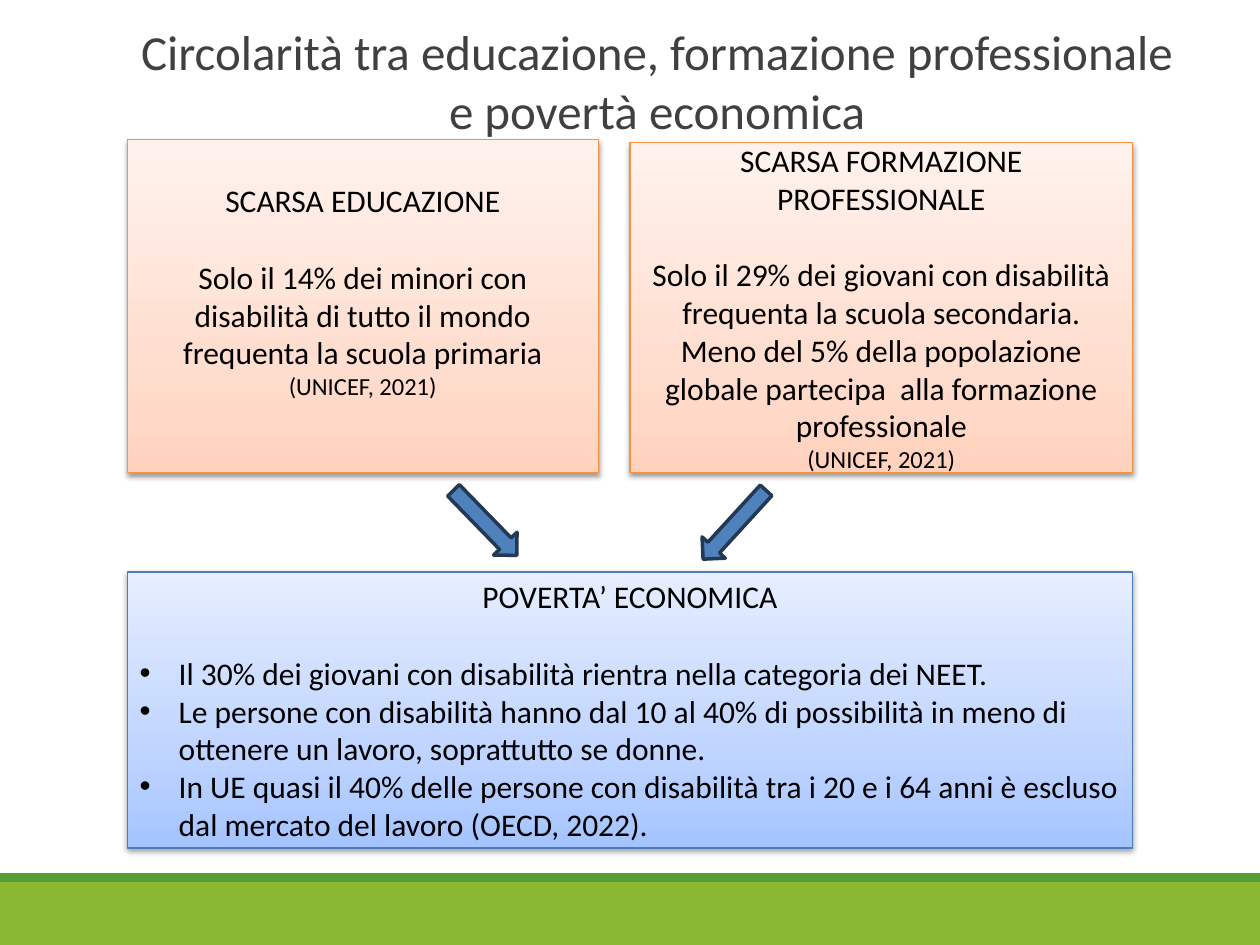
from copy import deepcopy

from lxml import etree
from pptx import Presentation
from pptx.dml.color import RGBColor
from pptx.enum.shapes import MSO_SHAPE as Shape
from pptx.enum.text import MSO_ANCHOR as Anchor, PP_ALIGN as Align
from pptx.oxml.ns import qn
from pptx.util import Inches, Pt

FONT = "Calibri"
BLACK = RGBColor(0x00, 0x00, 0x00)
TITLE_GREY = RGBColor(0x40, 0x40, 0x40)
LIGHT_GREEN = RGBColor(0x8A, 0xB8, 0x33)
DARK_GREEN = RGBColor(0x54, 0x9E, 0x39)
ARROW_BLUE = RGBColor(0x4F, 0x81, 0xBD)
ARROW_EDGE = RGBColor(0x23, 0x39, 0x53)
ORANGE_EDGE = RGBColor(0xF6, 0x92, 0x40)
BLUE_EDGE = RGBColor(0x4B, 0x7E, 0xBC)
ORANGE_STOPS = (
    (0, RGBColor(0xFF, 0xD2, 0xBD)),
    (0.35, RGBColor(0xFF, 0xDE, 0xD0)),
    (1, RGBColor(0xFF, 0xF2, 0xED)),
)
BLUE_STOPS = (
    (0, RGBColor(0xA4, 0xC4, 0xFF)),
    (0.35, RGBColor(0xBF, 0xD4, 0xFF)),
    (1, RGBColor(0xE6, 0xEE, 0xFF)),
)

LEFT, RIGHT, CARD_BOTTOM = 1.01, 8.99, 3.75
BODY_SIZE, SOURCE_SIZE = 18, 14
HEADING_GAP = Pt(22)
BULLET_INDENT = Inches(0.31)


def set_font(font, size, color=BLACK):
    values = {"name": FONT, "size": Pt(size)}
    for name, value in values.items():
        setattr(font, name, value)
    font.color.rgb = color


def add_plain_shape(slide, kind, box, fill, edge=None):
    shape = slide.shapes.add_shape(kind, *map(Inches, box))
    shape.shadow.inherit = False
    shape.fill.solid()
    shape.fill.fore_color.rgb = fill
    if edge is None:
        shape.line.fill.background()
    else:
        shape.line.color.rgb = edge
        shape.line.width = Pt(2)
    return shape


def add_soft_shadow(shape):
    shape.shadow.inherit = False
    effects = shape._element.spPr.find(qn("a:effectLst"))
    shadow = etree.SubElement(
        effects, qn("a:outerShdw"), blurRad=str(Pt(3.1)), dist=str(Pt(1.6)),
        dir="5400000", rotWithShape="0")
    color = etree.SubElement(shadow, qn("a:srgbClr"), val="000000")
    etree.SubElement(color, qn("a:alpha"), val="38000")


def fill_gradient(fill, stops, stop_list):
    """Give the fill three stops, the first one at the bottom."""
    stop_list.append(deepcopy(stop_list[-1]))
    for stop, (position, color) in zip(fill.gradient_stops, stops):
        stop.position = position
        stop.color.rgb = color
    fill.gradient_angle = 90


def add_card(slide, box, stops, edge):
    """Add a shaded rectangle and return its text frame."""
    shape = slide.shapes.add_shape(Shape.RECTANGLE, *map(Inches, box))
    shape.fill.gradient()
    fill_gradient(shape.fill, stops, shape._element.spPr.find(".//" + qn("a:gsLst")))
    shape.line.color.rgb = edge
    shape.line.width = Pt(0.75)
    add_soft_shadow(shape)
    frame = shape.text_frame
    frame.word_wrap = True
    frame.vertical_anchor = Anchor.MIDDLE
    return frame


def add_paragraph(frame, *runs, align=Align.CENTER, gap=None):
    """Write (text, size) runs in the next paragraph of the frame."""
    first = frame.paragraphs[0]
    paragraph = frame.add_paragraph() if first.runs else first
    paragraph.alignment = align
    if gap is not None:
        paragraph.space_before = gap
    for text, size in runs:
        run = paragraph.add_run()
        run.text = text
        set_font(run.font, size)
    return paragraph


def add_bullet(paragraph):
    properties = paragraph._p.get_or_add_pPr()
    properties.set("marL", str(BULLET_INDENT))
    properties.set("indent", str(-BULLET_INDENT))
    etree.SubElement(properties, qn("a:buFont"), typeface="Arial")
    etree.SubElement(properties, qn("a:buChar"), char="•")


def add_title(slide, box):
    title = slide.shapes.title
    title.left, title.top, title.width, title.height = map(Inches, box)
    frame = title.text_frame
    frame.text = "Circolarità tra educazione, formazione professionale e povertà economica"
    for side in ("left", "top", "right", "bottom"):
        setattr(frame, f"margin_{side}", 0)
    frame.word_wrap = True
    frame.vertical_anchor = Anchor.MIDDLE
    paragraph = frame.paragraphs[0]
    paragraph.alignment = Align.CENTER
    set_font(paragraph.runs[0].font, 28, TITLE_GREY)


def add_footer_bands(slide, box):
    left, top, width, height = box
    strip = 0.07
    add_plain_shape(slide, Shape.RECTANGLE,
                    (left, top + strip, width, height - strip), LIGHT_GREEN)
    add_plain_shape(slide, Shape.RECTANGLE, (left, top, width, strip), DARK_GREEN)


def add_education_card(slide, box):
    frame = add_card(slide, box, ORANGE_STOPS, ORANGE_EDGE)
    frame.margin_bottom = Inches(0.29)
    add_paragraph(frame, ("SCARSA EDUCAZIONE", BODY_SIZE))
    add_paragraph(
        frame,
        ("Solo il 14% dei minori con disabilità di tutto il mondo "
         "frequenta la scuola primaria ", BODY_SIZE),
        ("(UNICEF, 2021)", SOURCE_SIZE), gap=HEADING_GAP)


def add_training_card(slide, box):
    frame = add_card(slide, box, ORANGE_STOPS, ORANGE_EDGE)
    add_paragraph(frame, ("SCARSA FORMAZIONE PROFESSIONALE", BODY_SIZE))
    add_paragraph(
        frame,
        ("Solo il 29% dei giovani con disabilità frequenta la scuola secondaria. "
         "Meno del 5% della popolazione globale partecipa  alla formazione "
         "professionale", BODY_SIZE), gap=HEADING_GAP)
    add_paragraph(frame, ("(UNICEF, 2021)", SOURCE_SIZE))


def add_poverty_card(slide, box):
    frame = add_card(slide, box, BLUE_STOPS, BLUE_EDGE)
    add_paragraph(frame, ("POVERTA’ ECONOMICA", BODY_SIZE))
    facts = (
        "Il 30% dei giovani con disabilità rientra nella categoria dei NEET.",
        "Le persone con disabilità hanno dal 10 al 40% di possibilità in meno di "
        "ottenere un lavoro, soprattutto se donne.",
        "In UE quasi il 40% delle persone con disabilità tra i 20 e i 64 anni è "
        "escluso dal mercato del lavoro (OECD, 2022).",
    )
    for index, fact in enumerate(facts):
        gap = HEADING_GAP if index == 0 else None
        add_bullet(add_paragraph(frame, (fact, BODY_SIZE), align=Align.LEFT, gap=gap))


def add_arrow(slide, box, rotation):
    arrow = add_plain_shape(slide, Shape.RIGHT_ARROW, box, ARROW_BLUE, ARROW_EDGE)
    arrow.rotation = rotation


def main():
    presentation = Presentation()
    presentation.slide_width, presentation.slide_height = Inches(10), Inches(7.5)
    slide = presentation.slides.add_slide(presentation.slide_layouts[5])
    add_footer_bands(slide, (0, 6.93, 10, 0.57))
    add_title(slide, (LEFT, 0.17, 8.41, 0.94))
    add_education_card(slide, (LEFT, 1.11, 3.74, CARD_BOTTOM - 1.11))
    add_training_card(slide, (5, 1.13, RIGHT - 5, CARD_BOTTOM - 1.13))
    add_arrow(slide, (3.49, 4.02, 0.72, 0.26), 45.8)
    add_arrow(slide, (5.46, 4.04, 0.74, 0.25), 132.5)
    add_poverty_card(slide, (LEFT, 4.54, RIGHT - LEFT, 2.19))
    presentation.save("out.pptx")


if __name__ == "__main__":
    main()
